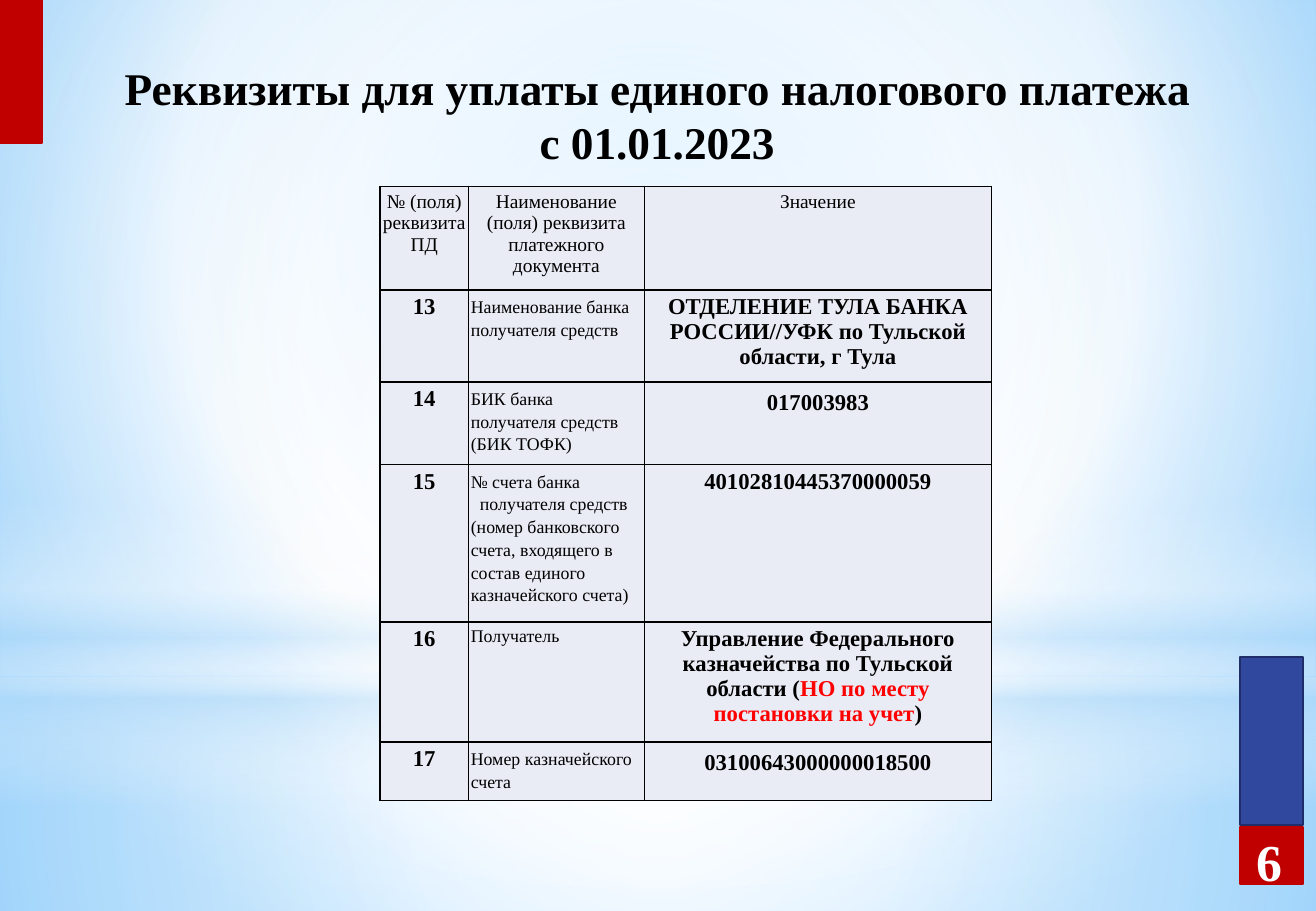
from lxml import etree
from pptx import Presentation
from pptx import util as u
from pptx.dml.color import RGBColor
from pptx.enum import shapes, text
from pptx.oxml import ns

FONT = "Times New Roman"
BLACK = RGBColor(0x00, 0x00, 0x00)
WHITE = RGBColor(0xFF, 0xFF, 0xFF)
RED = RGBColor(0xC0, 0x00, 0x00)
BRIGHT_RED = RGBColor(0xFF, 0x00, 0x00)
BLUE = RGBColor(0x31, 0x48, 0x9F)
DARK_BLUE = RGBColor(0x1F, 0x2E, 0x69)
CELL_FILL = RGBColor(0xE9, 0xEB, 0xF5)
SKY = RGBColor(0x9E, 0xD5, 0xFF)
DEEP_SKY = RGBColor(0x5B, 0xB9, 0xFF)
PALE_SKY = RGBColor(0xB4, 0xDC, 0xFA)

WIDTH, HEIGHT = 28.68, 19.86
CENTRE = (50, 50, 50, 50)
HEADER = {"size": u.Pt(12), "bold": False}
NAME = {"size": u.Pt(11), "bold": False}
VALUE = {"size": u.Pt(14), "bold": True}


def apply(target, values):
    for name, value in values.items():
        setattr(target, name, value)


class SlideBuilder:
    """Holds the style and the current slide."""

    def __init__(self, presentation):
        self.slide = presentation.slides.add_slide(presentation.slide_layouts[5])

    def gradient(self, fill, element, stops, focus=None):
        """Fill with stops of (position, colour, opacity), round a focus or downwards."""
        fill.gradient()
        gradient = element.find(".//" + ns.qn("a:gradFill"))
        for child in list(gradient):
            gradient.remove(child)
        stop_list = etree.SubElement(gradient, ns.qn("a:gsLst"))
        for position, colour, opacity in stops:
            stop = etree.SubElement(stop_list, ns.qn("a:gs"), pos=str(position * 1000))
            tint = etree.SubElement(stop, ns.qn("a:srgbClr"), val=str(colour))
            if opacity < 100:
                etree.SubElement(tint, ns.qn("a:alpha"), val=str(opacity * 1000))
        if focus:
            shade = etree.SubElement(gradient, ns.qn("a:path"), path="circle")
            sides = {side: str(value * 1000) for side, value in zip("ltrb", focus)}
            etree.SubElement(shade, ns.qn("a:fillToRect"), **sides)
        else:
            etree.SubElement(gradient, ns.qn("a:lin"), ang="5400000", scaled="0")

    def background(self, stops, focus):
        self.gradient(self.slide.background.fill, self.slide.element, stops, focus)

    def shape(self, box, kind=shapes.MSO_SHAPE.RECTANGLE):
        shape = self.slide.shapes.add_shape(kind, *map(u.Cm, box))
        shape.shadow.inherit = False
        return shape

    def glow(self, top, height, stops, focus=CENTRE, kind=shapes.MSO_SHAPE.RECTANGLE):
        shape = self.shape((0, top, WIDTH, height), kind)
        shape.line.fill.background()
        self.gradient(shape.fill, shape.element, stops, focus)

    def block(self, box, colour, line_colour):
        shape = self.shape(box)
        shape.fill.solid()
        shape.fill.fore_color.rgb = colour
        shape.line.color.rgb = line_colour
        shape.line.width = u.Pt(1.25)

    def add_runs(self, paragraph, runs, font, alignment=text.PP_ALIGN.CENTER, spacing=1.0):
        """Add runs of (text, colour)."""
        apply(paragraph, {"alignment": alignment, "line_spacing": spacing})
        for words, colour in runs:
            run = paragraph.add_run()
            run.text = words
            apply(run.font, {"name": FONT, **font})
            run.font.color.rgb = colour

    def title(self, box, words):
        title = self.slide.shapes.title
        self.slide.shapes._spTree.append(title.element)  # in front of the backdrop
        apply(title, dict(zip(("left", "top", "width", "height"), map(u.Cm, box))))
        apply(title.text_frame, {"word_wrap": True, "auto_size": text.MSO_AUTO_SIZE.NONE,
                                 "vertical_anchor": text.MSO_ANCHOR.BOTTOM})
        self.add_runs(title.text_frame.paragraphs[0], [(words, BLACK)],
                      {"size": u.Pt(28), "bold": True})

    def label(self, box, words, size):
        frame = self.slide.shapes.add_textbox(*map(u.Cm, box)).text_frame
        apply(frame, {"word_wrap": True, "vertical_anchor": text.MSO_ANCHOR.MIDDLE})
        self.add_runs(frame.paragraphs[0], [(words, WHITE)],
                      {"size": u.Pt(size), "bold": True})

    def table(self, left, top, widths, heights):
        table = self.slide.shapes.add_table(
            len(heights), len(widths), u.Cm(left), u.Cm(top),
            u.Cm(sum(widths)), u.Cm(sum(heights))).table
        apply(table, {"first_row": False, "horz_banding": False})
        for column, width in zip(table.columns, widths):
            column.width = u.Cm(width)
        for row, height in zip(table.rows, heights):
            row.height = u.Cm(height)
        return table

    def cell(self, cell, paragraphs, font, **layout):
        apply(cell, {"margin_left": u.Cm(0.05), "margin_right": u.Cm(0.05),
                     "margin_top": u.Cm(0.1), "margin_bottom": u.Cm(0.1)})
        cell.fill.solid()
        cell.fill.fore_color.rgb = CELL_FILL
        properties = cell._tc.get_or_add_tcPr()
        for index, side in enumerate("LRTB"):
            border = etree.Element(ns.qn("a:ln" + side), w=str(u.Pt(1)))
            solid = etree.SubElement(border, ns.qn("a:solidFill"))
            etree.SubElement(solid, ns.qn("a:srgbClr"), val=str(BLACK))
            properties.insert(index, border)
        frame = cell.text_frame
        for index, runs in enumerate(paragraphs):
            paragraph = frame.add_paragraph() if index else frame.paragraphs[0]
            self.add_runs(paragraph, runs, font, **layout)


HEADINGS = ("№ (поля) реквизита ПД", "Наименование (поля) реквизита платежного документа",
            "Значение")
# Field number, name paragraphs, name spacing, value runs, value spacing
FIELDS = [
    ("13", ["Наименование банка получателя средств"], 1.15,
     [("ОТДЕЛЕНИЕ ТУЛА БАНКА РОССИИ//УФК по Тульской области, г Тула", BLACK)], 1.0),
    ("14", ["БИК банка получателя средств (БИК ТОФК)"], 1.15, [("017003983", BLACK)], 1.15),
    ("15", ["№ счета банка получателя средств", "(номер банковского счета, входящего в",
            "состав единого казначейского счета)"], 1.15,
     [("40102810445370000059", BLACK)], 1.0),
    ("16", ["Получатель"], 1.0,
     [("Управление Федерального казначейства по Тульской области (", BLACK),
      ("НО по месту постановки на учет", BRIGHT_RED), (")", BLACK)], 1.0),
    ("17", ["Номер казначейского счета"], 1.15, [("03100643000000018500", BLACK)], 1.15),
]


def main():
    presentation = Presentation()
    apply(presentation, {"slide_width": u.Cm(WIDTH), "slide_height": u.Cm(HEIGHT)})
    builder = SlideBuilder(presentation)

    # Backdrop
    builder.background([(0, SKY, 100), (60, WHITE, 100), (100, DEEP_SKY, 100)],
                       (20, 10, 20, 60))
    builder.glow(14.78, 5.08, [(0, WHITE, 91), (37, WHITE, 76), (100, PALE_SKY, 79)])
    builder.glow(0, 14.78, [(0, WHITE, 89), (48, WHITE, 62), (100, PALE_SKY, 79)])
    builder.glow(10.92, 6.63, [(0, WHITE, 0), (29, WHITE, 30), (45, PALE_SKY, 40),
                               (55, WHITE, 26), (65, PALE_SKY, 60), (100, WHITE, 0)], None)
    builder.glow(4.62, 14.78, [(0, WHITE, 100), (56, WHITE, 0)],
                 kind=shapes.MSO_SHAPE.OVAL)

    # Corner blocks
    builder.block((27.03, 14.33, 1.37, 3.66), BLUE, DARK_BLUE)
    builder.block((27.03, 18.03, 1.37, 1.25), RED, RED)
    builder.block((0, 0, 0.91, 3.12), RED, RED)

    # Title
    builder.title((2.18, 1.24, 24.28, 2.57),
                  "Реквизиты для уплаты единого налогового платежа с 01.01.2023")

    # Payment details
    table = builder.table(8.28, 4.06, (1.93, 3.83, 7.57), (2.26, 2.01, 1.8, 3.43, 2.62, 1.27))
    for column, heading in enumerate(HEADINGS):
        builder.cell(table.cell(0, column), [[(heading, BLACK)]], HEADER)
    for row, (number, names, name_spacing, value, spacing) in enumerate(FIELDS, 1):
        builder.cell(table.cell(row, 0), [[(number, BLACK)]], VALUE)
        builder.cell(table.cell(row, 1), [[(name, BLACK)] for name in names], NAME,
                     alignment=text.PP_ALIGN.LEFT, spacing=name_spacing)
        builder.cell(table.cell(row, 2), [value], VALUE, spacing=spacing)
    # Hanging indent of the account number
    hanging = table.cell(3, 1).text_frame.paragraphs[0]._p.get_or_add_pPr()
    hanging.set("marL", str(u.Cm(0.2)))
    hanging.set("indent", str(-u.Cm(0.2)))

    # Page number
    builder.label((26.67, 17.81, 2.01, 1.9), "6", 32)

    presentation.save("out.pptx")


if __name__ == "__main__":
    main()
